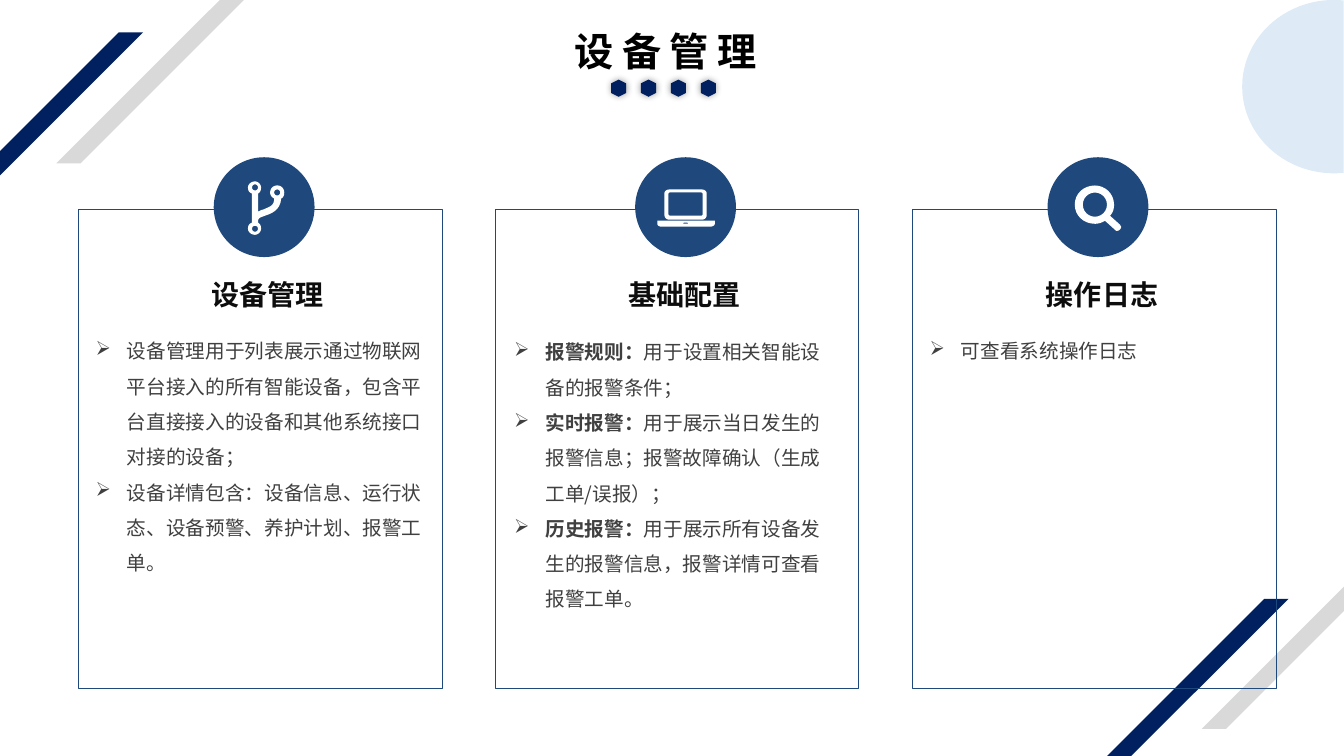
from math import cos, radians, sin

from lxml.etree import SubElement
from pptx import Presentation
from pptx.dml.color import RGBColor
from pptx.enum.shapes import MSO_SHAPE
from pptx.enum.text import MSO_ANCHOR, MSO_AUTO_SIZE, PP_ALIGN
from pptx.oxml.ns import qn
from pptx.util import Inches, Pt

FONT = "Noto Sans CJK SC"
COLOURS = {
    "navy": "002060", "blue": "1F497D", "pale": "DEEBF7", "grey": "D9D9D9",
    "white": "FFFFFF", "title": "000000", "heading": "0D0D0D", "body": "404040",
}


def paint(shape, fill=None, line=None):
    shape.shadow.inherit = False
    if fill:
        shape.fill.solid()
        shape.fill.fore_color.rgb = RGBColor.from_string(COLOURS[fill])
    else:
        shape.fill.background()
    if line:
        shape.line.color.rgb = RGBColor.from_string(COLOURS[line])
        shape.line.width = Pt(0.75)
    else:
        shape.line.fill.background()


def add_span(para, text, size, colour, bold=False):
    span = para.add_run()
    span.text = text
    span.font.size = Pt(size)
    span.font.bold = bold
    span.font.name = FONT
    span.font.color.rgb = RGBColor.from_string(COLOURS[colour])
    SubElement(span.font._element, qn("a:ea"), typeface=FONT)
    return span


deck = Presentation()
deck.slide_width, deck.slide_height = Inches(13.33), Inches(7.5)
page = deck.slides.add_slide(deck.slide_layouts[6])
shapes = page.shapes

# Pale disc cut off by the right edge
disc = [(Inches(13.23 + 0.91 * cos(radians(angle))), Inches(0.86 - 0.86 * sin(radians(angle))))
        for angle in range(84, 277, 4)]
builder = shapes.build_freeform(*disc[0], scale=1.0)
builder.add_line_segments(disc[1:], close=True)
paint(builder.convert_to_shape(), "pale")

# Diagonal bands in two corners
for left, top, colour in [(-1.41, 0.32, "navy"), (0.56, -0.97, "grey"),
                          (9.95, 5.94, "navy"), (11.92, 4.64, "grey")]:
    band = shapes.add_shape(MSO_SHAPE.PARALLELOGRAM, Inches(left), Inches(top),
                            Inches(2.83), Inches(2.59))
    band.adjustments[0] = 1.0
    paint(band, colour)

# Title
box = shapes.add_textbox(Inches(5.6), Inches(0.22), Inches(2.09), Inches(0.57))
box.text_frame.word_wrap = False
box.text_frame.auto_size = MSO_AUTO_SIZE.SHAPE_TO_FIT_TEXT
title = add_span(box.text_frame.paragraphs[0], "设备管理", 28, "title", True)
title.font._element.set("spc", "600")

# Row of glowing hexagons
for index in range(4):
    hexagon = shapes.add_shape(MSO_SHAPE.HEXAGON, Inches(6.05 + index * 0.89 / 3),
                               Inches(0.8), Inches(0.17), Inches(0.15))
    hexagon.rotation = 90
    paint(hexagon, "navy")
    effects = hexagon._element.spPr.find(qn("a:effectLst"))
    glow = SubElement(effects, qn("a:outerShdw"), blurRad=str(Pt(5)), dist="0",
                      algn="ctr", rotWithShape="0")
    black = SubElement(glow, qn("a:srgbClr"), val="000000")
    SubElement(black, qn("a:alpha"), val="40000")

# Icon contours: 2 numbers are a corner, 6 a Bezier curve, 3 a circle (centre, radius)
branch = [
    [(2.79, 1.97), (2.78, 2.09, 2.69, 2.12, 2.63, 2.14), (2.58, 2.16, 2.56, 2.16, 2.56, 2.2),
     (2.56, 2.21), (2.58, 2.22, 2.59, 2.24, 2.59, 2.27), (2.59, 2.3, 2.56, 2.33, 2.53, 2.33),
     (2.49, 2.33, 2.46, 2.3, 2.46, 2.27), (2.46, 2.24, 2.47, 2.22, 2.5, 2.21), (2.5, 1.92),
     (2.47, 1.91, 2.46, 1.89, 2.46, 1.86), (2.46, 1.83, 2.49, 1.8, 2.53, 1.8),
     (2.56, 1.8, 2.59, 1.83, 2.59, 1.86), (2.59, 1.89, 2.58, 1.91, 2.56, 1.92), (2.56, 2.1),
     (2.58, 2.09, 2.6, 2.08, 2.61, 2.08), (2.68, 2.05, 2.72, 2.04, 2.72, 1.97),
     (2.7, 1.96, 2.68, 1.94, 2.68, 1.91), (2.68, 1.87, 2.71, 1.84, 2.75, 1.84),
     (2.79, 1.84, 2.82, 1.87, 2.82, 1.91), (2.82, 1.94, 2.81, 1.96, 2.79, 1.97)],
    [(2.53, 1.86, 0.03)], [(2.53, 2.27, 0.03)], [(2.75, 1.91, 0.03)],
]
laptop = [
    [(7.09, 2.19), (7.09, 2.22), (7.09, 2.24, 7.06, 2.25, 7.04, 2.25), (6.57, 2.25),
     (6.54, 2.25, 6.52, 2.24, 6.52, 2.22), (6.52, 2.19)],
    [(6.59, 2.13), (6.59, 1.92), (6.59, 1.9, 6.61, 1.88, 6.64, 1.88), (6.96, 1.88),
     (6.99, 1.88, 7.01, 1.9, 7.01, 1.92), (7.01, 2.13), (7.01, 2.16, 6.99, 2.18, 6.96, 2.18),
     (6.64, 2.18), (6.61, 2.18, 6.59, 2.16, 6.59, 2.13)],
    [(6.63, 2.13), (6.64, 2.14), (6.96, 2.14), (6.97, 2.13), (6.97, 1.92), (6.96, 1.91),
     (6.64, 1.91), (6.63, 1.92)],
    [(6.77, 2.22), (6.78, 2.21), (6.82, 2.21), (6.83, 2.22)],
]
magnifier = [
    [(11.08, 2.29), (11.07, 2.29, 11.07, 2.29, 11.06, 2.28), (10.96, 2.19),
     (10.93, 2.21, 10.89, 2.22, 10.86, 2.22), (10.75, 2.22, 10.66, 2.14, 10.66, 2.03),
     (10.66, 1.92, 10.75, 1.84, 10.86, 1.84), (10.96, 1.84, 11.05, 1.92, 11.05, 2.03),
     (11.05, 2.07, 11.04, 2.11, 11.01, 2.14), (11.11, 2.23),
     (11.11, 2.24, 11.12, 2.24, 11.12, 2.25), (11.12, 2.27, 11.1, 2.29, 11.08, 2.29)],
    [(10.86, 2.03, 0.12)],
]

# Cards: left, heading left, badge left, icon, heading, body place, items (lead, text)
cards = [
    (0.78, 1.84, 2.12, branch, "设备管理", (0.95, 3.25, 3.27, 3.64), [
        ("", "设备管理用于列表展示通过物联网平台接入的所有智能设备，包含平台直接接入的设备和其他系统接口对接的设备；"),
        ("", "设备详情包含：设备信息、运行状态、设备预警、养护计划、报警工单。")]),
    (4.91, 5.98, 6.3, laptop, "基础配置", (5.1, 3.26, 3.15, 3.58), [
        ("报警规则：", "用于设置相关智能设备的报警条件；"),
        ("实时报警：", "用于展示当日发生的报警信息；报警故障确认（生成工单/误报）；"),
        ("历史报警：", "用于展示所有设备发生的报警信息，报警详情可查看报警工单。")]),
    (9.05, 10.12, 10.39, magnifier, "操作日志", (9.22, 3.25, 3.27, 2.85), [
        ("", "可查看系统操作日志")]),
]
for left, heading_left, badge_left, icon, heading, body_place, items in cards:
    frame = shapes.add_shape(MSO_SHAPE.RECTANGLE, Inches(left), Inches(2.08),
                             Inches(3.61), Inches(4.75))
    paint(frame, line="blue")
    badge = shapes.add_shape(MSO_SHAPE.OVAL, Inches(badge_left), Inches(1.56),
                             Inches(1), Inches(0.99))
    paint(badge, "blue")

    # Icon, with curves drawn as short segments
    builder = None
    for contour in icon:
        points = []
        for segment in contour:
            if len(segment) == 2:
                points.append(segment)
            elif len(segment) == 3:
                x, y, radius = segment
                points += [(x + radius * cos(radians(angle)), y + radius * sin(radians(angle)))
                           for angle in range(0, 360, 15)]
            else:
                x0, y0 = points[-1]
                x1, y1, x2, y2, x3, y3 = segment
                for step in range(1, 9):
                    t = step / 8
                    a, b, c, d = (1 - t) ** 3, 3 * t * (1 - t) ** 2, 3 * t * t * (1 - t), t ** 3
                    points.append((a * x0 + b * x1 + c * x2 + d * x3,
                                   a * y0 + b * y1 + c * y2 + d * y3))
        points = [(Inches(x), Inches(y)) for x, y in points]
        if builder is None:
            builder = shapes.build_freeform(*points[0], scale=1.0)
        else:
            builder.move_to(*points[0])
        builder.add_line_segments(points[1:], close=True)
    paint(builder.convert_to_shape(), "white")

    # Heading and bulleted body
    heading_place = (heading_left, 2.8, 1.62, 0.28)
    heading_text, body_text = [shapes.add_textbox(*map(Inches, place)).text_frame
                               for place in (heading_place, body_place)]
    for text in (heading_text, body_text):
        text.word_wrap = True
        text.margin_left = text.margin_right = text.margin_top = text.margin_bottom = 0
    heading_text.vertical_anchor = MSO_ANCHOR.MIDDLE
    para = heading_text.paragraphs[0]
    para.alignment = PP_ALIGN.CENTER
    para.line_spacing = 0.9
    add_span(para, heading, 20, "heading", True)
    for index, (lead, detail) in enumerate(items):
        para = body_text.add_paragraph() if index else body_text.paragraphs[0]
        properties = para._p.get_or_add_pPr()
        properties.set("marL", str(Inches(0.31)))
        properties.set("indent", str(Inches(-0.31)))
        SubElement(properties, qn("a:buChar"), char="➢")
        para.line_spacing = 1.5
        if lead:
            add_span(para, lead, 14, "body", True)
        add_span(para, detail, 14, "body")

deck.save("out.pptx")
